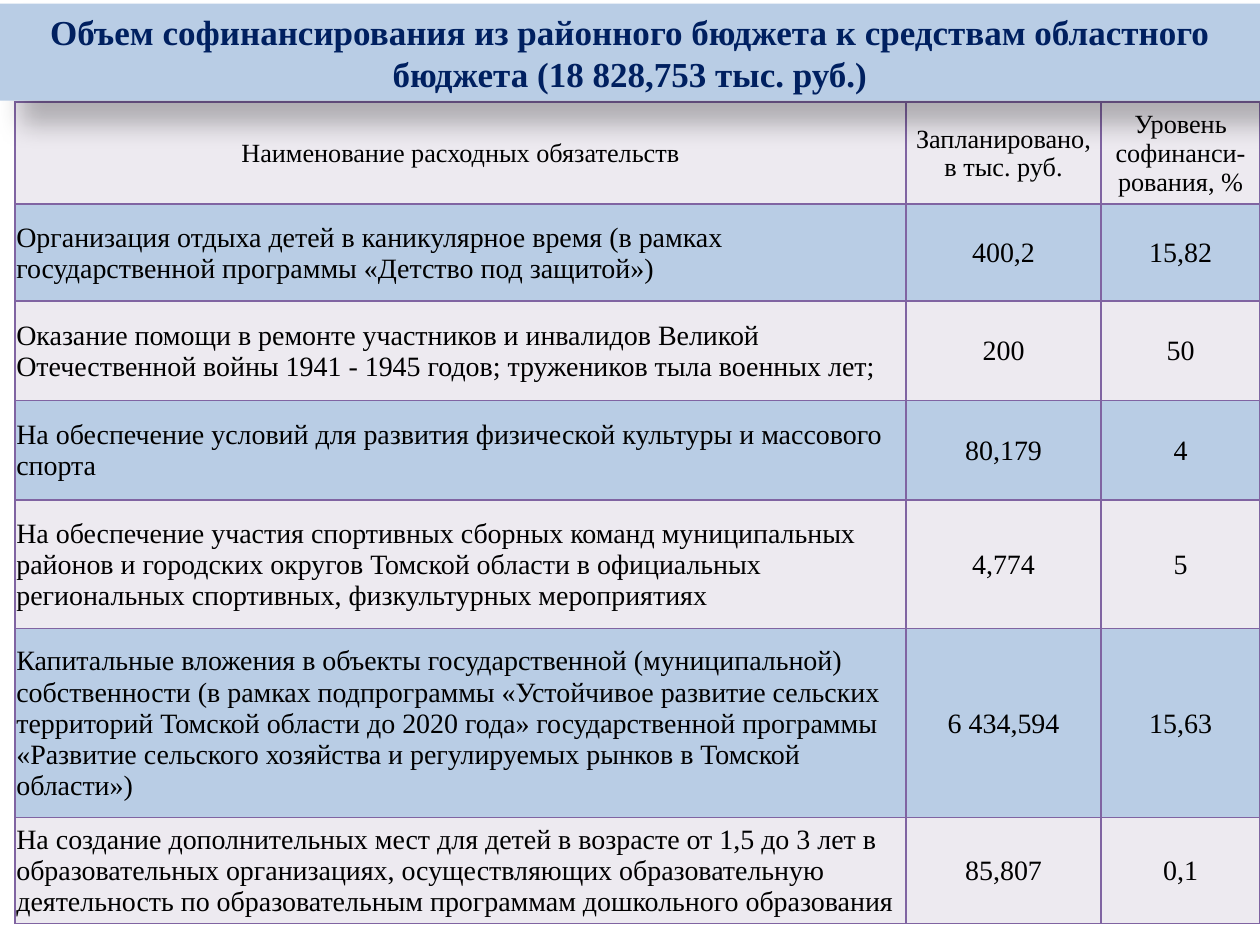
from lxml import etree
from pptx import Presentation
from pptx.dml.color import RGBColor
from pptx.enum.shapes import MSO_SHAPE
from pptx.enum.text import MSO_ANCHOR, MSO_AUTO_SIZE, PP_ALIGN
from pptx.oxml import parse_xml
from pptx.oxml.ns import nsdecls, qn
from pptx.util import Inches, Pt

RECTANGLE = MSO_SHAPE.RECTANGLE
MIDDLE = MSO_ANCHOR.MIDDLE
FIT_SHAPE = MSO_AUTO_SIZE.SHAPE_TO_FIT_TEXT
LEFT, CENTER = PP_ALIGN.LEFT, PP_ALIGN.CENTER

FONT = "Times New Roman"
BLUE, PALE, PURPLE, NAVY, BLACK = "B9CDE5", "EDEAF0", "8064A2", "002060", "000000"

TITLE = ("Объем софинансирования из районного бюджета к средствам областного "
         "бюджета (18 828,753 тыс. руб.)")
HEADER = ("Наименование расходных обязательств",
          "Запланировано,\nв тыс. руб.",
          "Уровень софинанси-рования, %")
OBLIGATIONS = (
    ("Организация отдыха детей в каникулярное время (в рамках "
     "государственной программы «Детство под защитой»)", "400,2", "15,82"),
    ("Оказание помощи в ремонте участников и инвалидов Великой "
     "Отечественной войны 1941 - 1945 годов; тружеников тыла военных лет;",
     "200", "50"),
    ("На обеспечение условий для развития физической культуры и массового спорта",
     "80,179", "4"),
    ("На обеспечение участия спортивных сборных команд муниципальных "
     "районов и городских округов Томской области в официальных "
     "региональных спортивных, физкультурных мероприятиях", "4,774", "5"),
    ("Капитальные вложения в объекты государственной (муниципальной) "
     "собственности (в рамках подпрограммы «Устойчивое развитие сельских "
     "территорий Томской области до 2020 года» государственной программы "
     "«Развитие сельского хозяйства и регулируемых рынков в Томской области»)",
     "6 434,594", "15,63"),
    ("На создание дополнительных мест для детей в возрасте от 1,5 до 3 лет в "
     "образовательных организациях, осуществляющих образовательную "
     "деятельность по образовательным программам дошкольного образования",
     "85,807", "0,1"),
)
COLUMN_WIDTHS = (7.07, 1.55, 1.26)
ROW_HEIGHTS = (0.81, 0.77, 0.79, 0.79, 1.02, 1.5, 0.84)


def rgb(value):
    """Turn a hex string into a colour."""
    return RGBColor.from_string(value)


def write(frame, text, size=16, color=BLACK, bold=False, align=CENTER):
    """Fill a text frame with one paragraph per line of text."""
    frame.word_wrap = True
    frame.text = text
    for paragraph in frame.paragraphs:
        paragraph.alignment = align
        font = paragraph.runs[0].font
        font.name, font.size, font.bold = FONT, Pt(size), bold
        font.color.rgb = rgb(color)


class BudgetSlide:
    """Hold the slide and its style, and draw its elements."""

    def __init__(self, slide, border=PURPLE, border_width=1):
        """Keep the slide and the table border style."""
        self.slide = slide
        self.border = border
        self.border_width = Pt(border_width)

    def outline(self, cell):
        """Draw all four borders of a cell."""
        properties = cell._tc.get_or_add_tcPr()
        for position, side in enumerate(("a:lnL", "a:lnR", "a:lnT", "a:lnB")):
            line = etree.Element(qn(side), w=str(self.border_width))
            fill = etree.SubElement(line, qn("a:solidFill"))
            etree.SubElement(fill, qn("a:srgbClr"), val=self.border)
            properties.insert(position, line)

    def table(self, rows, left, top, widths, heights):
        """Draw a table with alternating row fills."""
        table = self.slide.shapes.add_table(
            len(rows), len(widths), Inches(left), Inches(top),
            Inches(sum(widths)), Inches(sum(heights))).table
        for column, width in zip(table.columns, widths):
            column.width = Inches(width)
        for index, (row, height, texts) in enumerate(zip(table.rows, heights, rows)):
            row.height = Inches(height)
            for number, (cell, text) in enumerate(zip(row.cells, texts)):
                cell.margin_left = cell.margin_right = cell.margin_top = Inches(0.01)
                cell.margin_bottom = 0
                cell.vertical_anchor = MIDDLE
                cell.fill.solid()
                cell.fill.fore_color.rgb = rgb(BLUE if index % 2 else PALE)
                self.outline(cell)
                write(cell.text_frame, text, size=16 if index else 15,
                      align=LEFT if index and number == 0 else CENTER)

    def banner(self, text, left, top, width, height):
        """Draw the title band with a soft shadow below it."""
        band = self.slide.shapes.add_shape(
            RECTANGLE, Inches(left), Inches(top), Inches(width), Inches(height))
        band.shadow.inherit = False
        band.fill.solid()
        band.fill.fore_color.rgb = rgb(BLUE)
        band.line.fill.background()
        effects = band._element.spPr.find(qn("a:effectLst"))
        effects.append(parse_xml(
            f'<a:outerShdw {nsdecls("a")} blurRad="{Pt(15)}" dist="{Pt(18)}" '
            f'dir="2700000" algn="ctr" rotWithShape="0"><a:srgbClr val="{BLACK}">'
            '<a:alpha val="26000"/></a:srgbClr></a:outerShdw>'))
        write(band.text_frame, text, size=20, color=NAVY, bold=True)
        band.text_frame.auto_size = FIT_SHAPE


def main():
    """Build and save the presentation."""
    deck = Presentation()
    deck.slide_width, deck.slide_height = Inches(10), Inches(7.5)
    budget = BudgetSlide(deck.slides.add_slide(deck.slide_layouts[6]))
    budget.table((HEADER, *OBLIGATIONS), 0.12, 0.81, COLUMN_WIDTHS, ROW_HEIGHTS)
    budget.banner(TITLE, 0, 0.03, 10, 0.77)
    deck.save("out.pptx")


if __name__ == "__main__":
    main()
